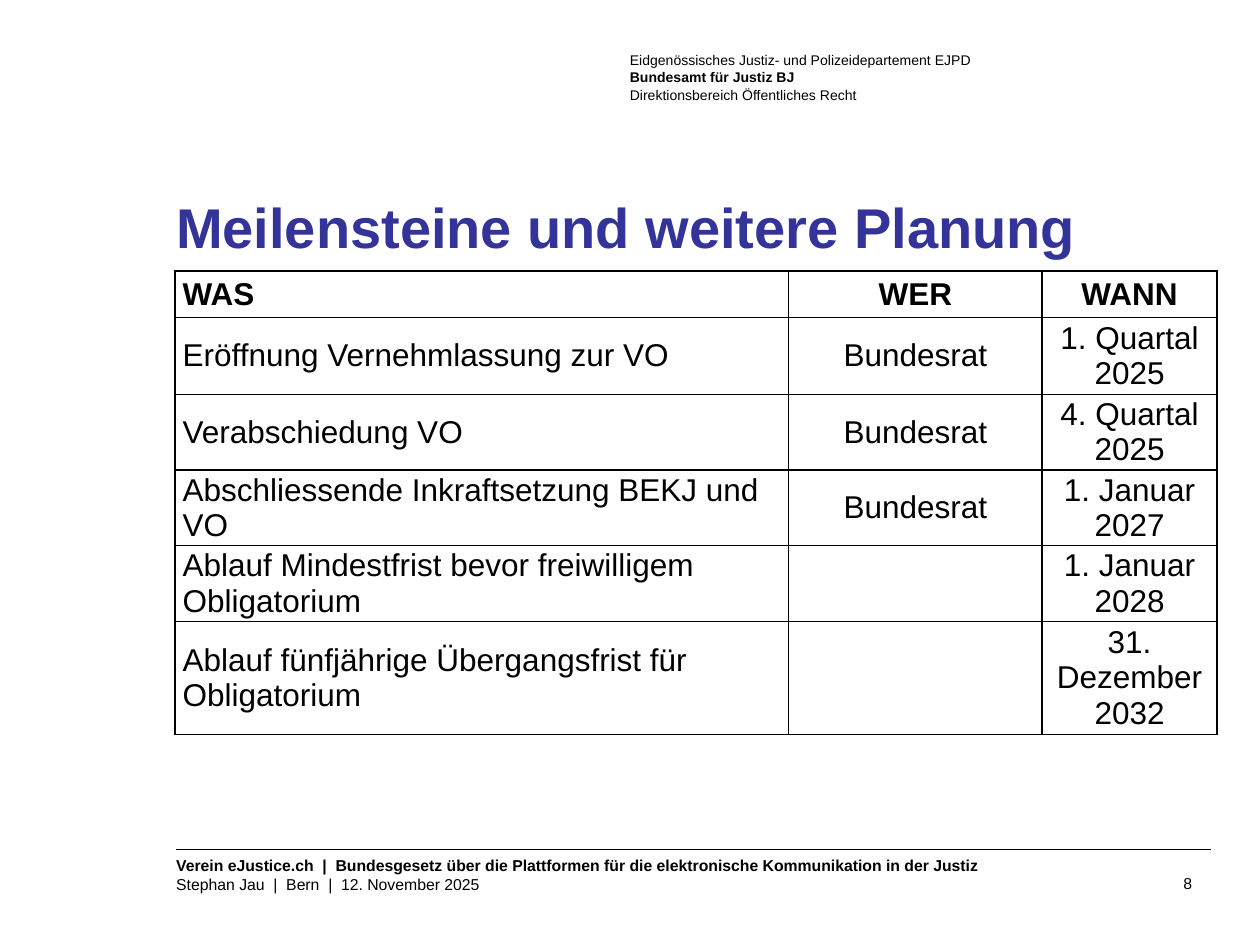
import pptx
import pptx.dml.color
import pptx.enum.shapes
import pptx.enum.text
import pptx.oxml
import pptx.oxml.ns
import pptx.util

Inches, Pt = pptx.util.Inches, pptx.util.Pt
ALIGN = pptx.enum.text.PP_ALIGN
ANCHOR = pptx.enum.text.MSO_ANCHOR

COLORS = {"text": "000000", "title": "333399"}
FONT = "Arial"
WIDTH, HEIGHT = 10, 7.5

TITLE = "Meilensteine und weitere Planung"
DEPARTMENT = [
    ("Eidgenössisches Justiz- und Polizeidepartement EJPD", False),
    ("Bundesamt für Justiz BJ", True),
    ("Direktionsbereich Öffentliches Recht", False),
]
FOOTER = [
    ("Verein eJustice.ch  |  Bundesgesetz über die Plattformen für die "
     "elektronische Kommunikation in der Justiz", True),
    ("Stephan Jau  |  Bern  |  12. November 2025", False),
]
PAGE_NUMBER = "8"
MILESTONES = [
    ("WAS", "WER", "WANN"),
    ("Eröffnung Vernehmlassung zur VO", "Bundesrat", "1. Quartal 2025"),
    ("Verabschiedung VO", "Bundesrat", "4. Quartal 2025"),
    ("Abschliessende Inkraftsetzung BEKJ und VO", "Bundesrat", "1. Januar 2027"),
    ("Ablauf Mindestfrist bevor freiwilligem Obligatorium", "", "1. Januar 2028"),
    ("Ablauf fünfjährige Übergangsfrist für Obligatorium", "", "31. Dezember 2032"),
]
COLUMN_WIDTHS = [4.87, 2.01, 1.39]
ROW_HEIGHTS = [0.37, 0.61] + [0.43] * 4

MARGIN = 0.13 * WIDTH
TABLE_LEFT, TABLE_TOP = 1.39, 2.15
FOOTER_TOP, FOOTER_HEIGHT = 6.74, 0.39


def style(paragraph, size, color="text", bold=False, align=ALIGN.LEFT):
    paragraph.alignment = align
    for run in paragraph.runs:
        run.font.name = FONT
        run.font.size = Pt(size)
        run.font.bold = bold
        run.font.color.rgb = pptx.dml.color.RGBColor.from_string(COLORS[color])


def add_text(slide, area, lines, size, color="text", align=ALIGN.LEFT,
             anchor=ANCHOR.TOP, spacing=1.0, inset_top=0.05):
    frame = slide.shapes.add_textbox(*map(Inches, area)).text_frame
    frame.word_wrap = True
    frame.vertical_anchor = anchor
    frame.margin_top = Inches(inset_top)
    frame.text = "\n".join(line for line, bold in lines)
    for paragraph, (line, bold) in zip(frame.paragraphs, lines):
        paragraph.line_spacing = spacing
        style(paragraph, size, color, bold, align)


def add_borders(cell):
    properties = cell._tc.get_or_add_tcPr()
    for position, side in enumerate(("lnL", "lnR", "lnT", "lnB")):
        properties.insert(position, pptx.oxml.parse_xml(
            f'<a:{side} {pptx.oxml.ns.nsdecls("a")} w="{Pt(1)}">'
            f'<a:solidFill><a:srgbClr val="{COLORS["text"]}"/></a:solidFill>'
            f'</a:{side}>'))


def add_milestones(slide):
    table = slide.shapes.add_table(
        len(MILESTONES), len(COLUMN_WIDTHS), Inches(TABLE_LEFT), Inches(TABLE_TOP),
        Inches(sum(COLUMN_WIDTHS)), Inches(sum(ROW_HEIGHTS))).table
    table.horz_banding = False
    for column, width in zip(table.columns, COLUMN_WIDTHS):
        column.width = Inches(width)
    for row, height in zip(table.rows, ROW_HEIGHTS):
        row.height = Inches(height)
    for r, milestone in enumerate(MILESTONES):
        for c, entry in enumerate(milestone):
            cell = table.cell(r, c)
            cell.fill.background()
            cell.vertical_anchor = ANCHOR.MIDDLE
            cell.margin_left = cell.margin_right = Inches(0.06)
            cell.margin_top = cell.margin_bottom = 0
            cell.text_frame.text = entry
            style(cell.text_frame.paragraphs[0], 18, bold=r == 0,
                  align=ALIGN.CENTER if c else ALIGN.LEFT)
            add_borders(cell)


def add_footer_rule(slide):
    rule = slide.shapes.add_connector(
        pptx.enum.shapes.MSO_CONNECTOR.STRAIGHT,
        *map(Inches, (9.61, FOOTER_TOP, 1.4, FOOTER_TOP)))
    rule.line.width = Pt(0.75)
    rule.line.color.rgb = pptx.dml.color.RGBColor.from_string(COLORS["text"])
    rule._element.spPr.append(pptx.oxml.parse_xml(
        f'<a:effectLst {pptx.oxml.ns.nsdecls("a")}/>'))


def main():
    deck = pptx.Presentation()
    deck.slide_width, deck.slide_height = Inches(WIDTH), Inches(HEIGHT)
    slide = deck.slides.add_slide(deck.slide_layouts[6])
    add_text(slide, (4.9, 0.35, 4.69, 0.52), DEPARTMENT, 8, spacing=1.05)
    add_footer_rule(slide)
    add_text(slide, (MARGIN, FOOTER_TOP, 6.65, FOOTER_HEIGHT), FOOTER, 9)
    add_text(slide, (MARGIN, 1.16, 8.27, 1.12), [(TITLE, True)], 32,
             color="title", spacing=1.5, inset_top=0.1)
    add_text(slide, (8.58, FOOTER_TOP, 0.98, FOOTER_HEIGHT), [(PAGE_NUMBER, False)], 9,
             align=ALIGN.RIGHT, anchor=ANCHOR.BOTTOM, spacing=1.05)
    add_milestones(slide)
    deck.save("out.pptx")


if __name__ == "__main__":
    main()
